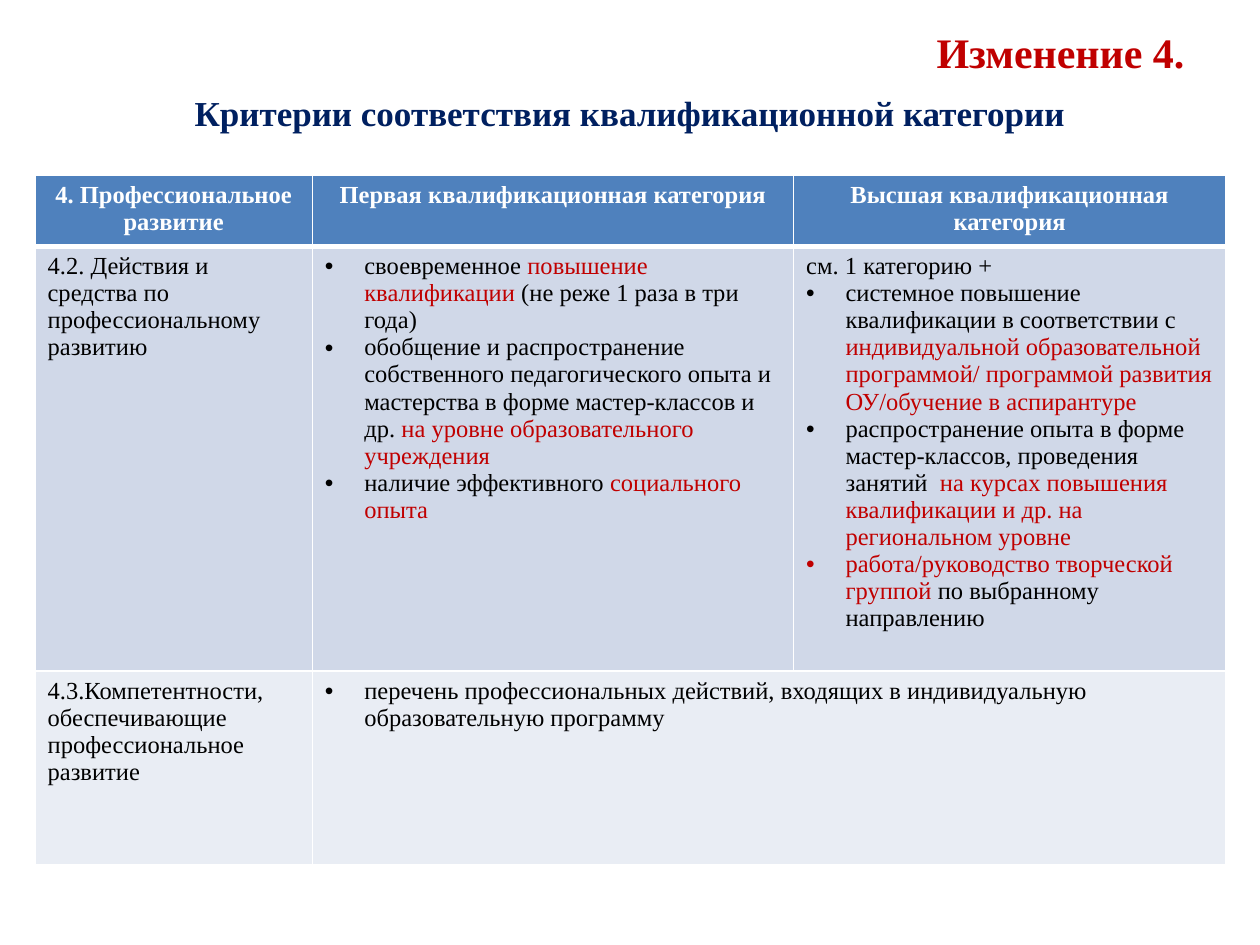
import dataclasses

import lxml.etree
import pptx
import pptx.dml.color
import pptx.enum.text
import pptx.oxml.ns
import pptx.util

Pt = pptx.util.Pt
qn = pptx.oxml.ns.qn
Align = pptx.enum.text.PP_ALIGN
Anchor = pptx.enum.text.MSO_ANCHOR


@dataclasses.dataclass(frozen=True)
class Theme:
    font: str = "Times New Roman"
    title_size: int = 24
    subtitle_size: int = 20
    table_size: int = 14
    accent: str = "C00000"
    navy: str = "002060"
    black: str = "000000"
    white: str = "FFFFFF"
    header_fill: str = "4F81BD"
    row_fills: tuple = ("D0D8E8", "E9EDF4")


THEME = Theme()
BULLET = "• "
BULLET_INDENT = 22.5
COLUMN_WIDTHS = (158.5, 275, 247)
ROW_HEIGHTS = (40, 228.5, 111)

# Text between bars takes the accent colour; a leading bullet makes a list item.
HEADERS = (
    "4. Профессиональное развитие",
    "Первая квалификационная категория",
    "Высшая квалификационная категория",
)
ROWS = (
    (
        ["4.2. Действия и средства по профессиональному развитию"],
        [
            "• своевременное |повышение квалификации| (не реже 1 раза в три года)",
            "• обобщение и распространение собственного педагогического опыта и "
            "мастерства в форме мастер-классов и др. "
            "|на уровне образовательного учреждения|",
            "• наличие эффективного |социального опыта|",
        ],
        [
            "см. 1 категорию +",
            "• системное повышение квалификации в соответствии с "
            "|индивидуальной образовательной программой/ программой развития "
            "ОУ/обучение в аспирантуре|",
            "• распространение опыта в форме мастер-классов, проведения занятий  "
            "|на курсах повышения квалификации и др. на региональном уровне|",
            "• |работа/руководство творческой группой |по выбранному направлению",
        ],
    ),
    (
        ["4.3.Компетентности, обеспечивающие профессиональное развитие"],
        [
            "• перечень профессиональных действий, входящих в индивидуальную "
            "образовательную программу"
        ],
    ),
)


def rgb(value):
    return pptx.dml.color.RGBColor.from_string(value)


def set_bullet(para):
    properties = para._p.get_or_add_pPr()
    indent = Pt(BULLET_INDENT)
    properties.set("marL", str(indent))
    properties.set("indent", str(-indent))
    lxml.etree.SubElement(properties, qn("a:buFont")).set("typeface", "Arial")
    lxml.etree.SubElement(properties, qn("a:buChar")).set("char", BULLET.strip())


def write_text(frame, lines, *, size, color, bold=False, align=Align.LEFT):
    for index, line in enumerate(lines):
        para = frame.paragraphs[0] if index == 0 else frame.add_paragraph()
        para.alignment = align
        if line.startswith(BULLET):
            set_bullet(para)
            line = line.removeprefix(BULLET)
        for position, text in enumerate(line.split("|")):
            if not text:
                continue
            span = para.add_run()
            span.text = text
            span.font.name = THEME.font
            span.font.size = Pt(size)
            span.font.bold = bold
            span.font.color.rgb = rgb(THEME.accent if position % 2 else color)


def add_text_box(page, left, top, width, height, text, anchor, **text_format):
    box = page.shapes.add_textbox(Pt(left), Pt(top), Pt(width), Pt(height))
    box.text_frame.word_wrap = True
    box.text_frame.vertical_anchor = anchor
    write_text(box.text_frame, [text], **text_format)


def set_borders(cell, bottom=1):
    properties = cell._tc.get_or_add_tcPr()
    for side, width in (("L", 1), ("R", 1), ("T", 1), ("B", bottom)):
        line = lxml.etree.SubElement(properties, qn(f"a:ln{side}"), w=str(Pt(width)))
        fill = lxml.etree.SubElement(line, qn("a:solidFill"))
        lxml.etree.SubElement(fill, qn("a:srgbClr"), val=THEME.white)


def fill_cell(cell, lines, fill, bottom=1, **text_format):
    set_borders(cell, bottom)
    cell.fill.solid()
    cell.fill.fore_color.rgb = rgb(fill)
    write_text(cell.text_frame, lines, size=THEME.table_size, **text_format)


def add_criteria_table(page, left, top):
    table = page.shapes.add_table(
        len(ROW_HEIGHTS), len(COLUMN_WIDTHS), Pt(left), Pt(top),
        Pt(sum(COLUMN_WIDTHS)), Pt(sum(ROW_HEIGHTS)),
    ).table
    for column, width in zip(table.columns, COLUMN_WIDTHS):
        column.width = Pt(width)
    for row, height in zip(table.rows, ROW_HEIGHTS):
        row.height = Pt(height)

    # Header row
    for column, header in enumerate(HEADERS):
        fill_cell(table.cell(0, column), [header], THEME.header_fill, bottom=3,
                  color=THEME.white, bold=True, align=Align.CENTER)

    # Criteria rows; the last one shares its text between both categories
    table.cell(2, 1).merge(table.cell(2, 2))
    for row, (cells, fill) in enumerate(zip(ROWS, THEME.row_fills), start=1):
        for column, lines in enumerate(cells):
            fill_cell(table.cell(row, column), lines, fill, color=THEME.black)


def main():
    deck = pptx.Presentation()
    deck.slide_width, deck.slide_height = Pt(720), Pt(540)
    page = deck.slides.add_slide(deck.slide_layouts[6])

    # Headings
    add_text_box(page, 36, 9.5, 648, 39.5, "Изменение 4.", Anchor.MIDDLE,
                 size=THEME.title_size, color=THEME.accent, bold=True,
                 align=Align.RIGHT)
    add_text_box(page, 36, 49, 648, 433.5,
                 "Критерии соответствия квалификационной категории", Anchor.TOP,
                 size=THEME.subtitle_size, color=THEME.navy, bold=True,
                 align=Align.CENTER)

    # Table
    add_criteria_table(page, 20, 100)
    deck.save("out.pptx")


if __name__ == "__main__":
    main()
